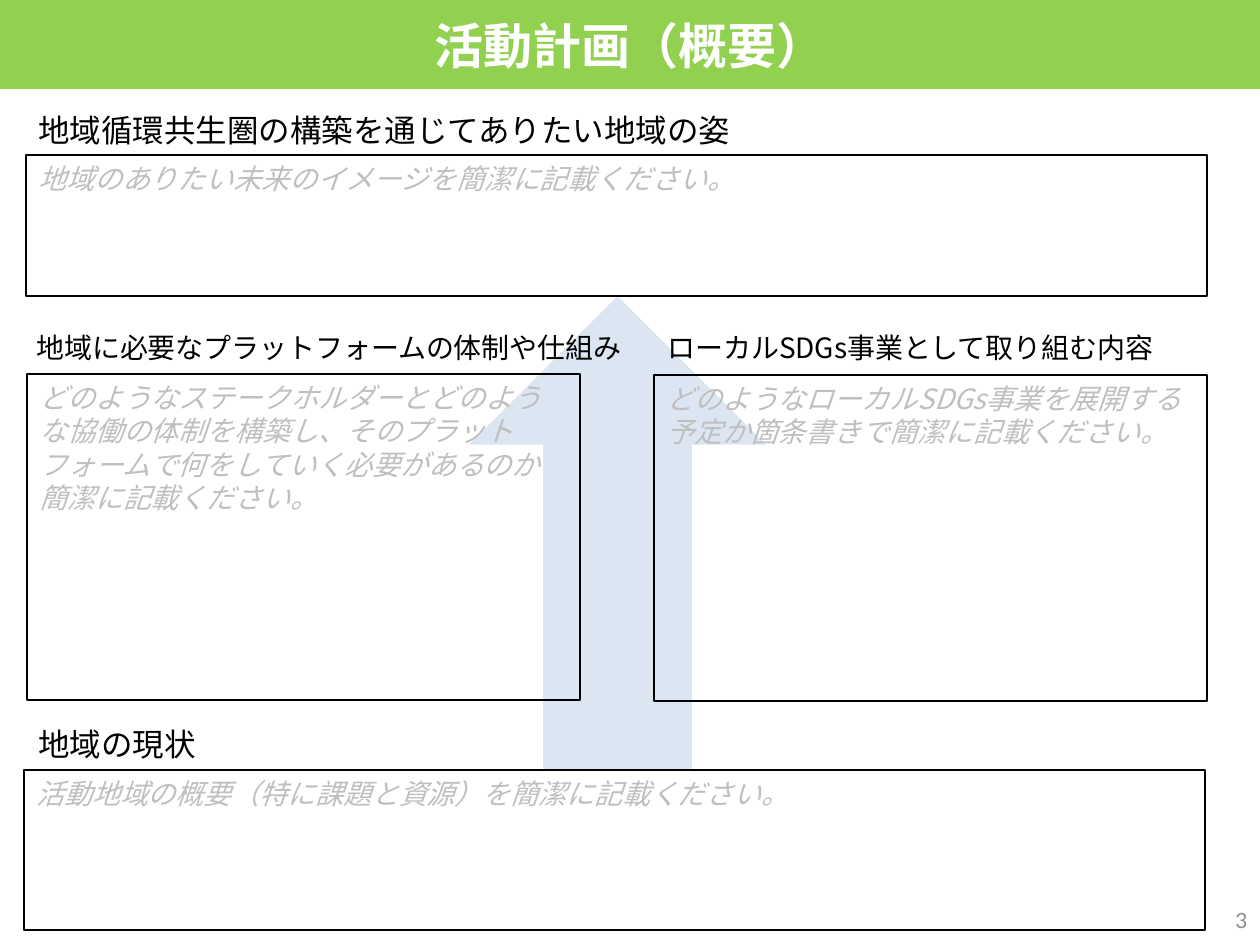
from lxml.etree import SubElement
from pptx import Presentation
from pptx.dml.color import RGBColor
from pptx.enum.shapes import MSO_SHAPE as SHAPE
from pptx.enum.text import MSO_ANCHOR as ANCHOR, PP_ALIGN as ALIGN
from pptx.oxml.ns import qn
from pptx.util import Emu, Pt

PX = 914400 // 126
JAPANESE = "Noto Sans CJK JP"
BLACK, HINT_GREY = "000000", "BFBFBF"


def px(*lengths):
    return [Emu(length * PX) for length in lengths]


def color(hex_string):
    return RGBColor.from_string(hex_string)


def write(frame, text, size=16, font=JAPANESE, ink=BLACK, bold=False,
          italic=False, align=ALIGN.LEFT, anchor=ANCHOR.TOP, inset=None):
    frame.word_wrap = True
    frame.vertical_anchor = anchor
    if inset is not None:
        frame.margin_left = frame.margin_right = inset
        frame.margin_top = frame.margin_bottom = inset
    paragraph = frame.paragraphs[0]
    paragraph.alignment = align
    run = paragraph.add_run()
    run.text = text
    run.font.size = Pt(size)
    run.font.name = font
    run.font.bold = bold
    run.font.italic = italic
    run.font.color.rgb = color(ink)
    # East Asian characters take their typeface from a separate element.
    SubElement(run.font._element, qn("a:ea"), typeface=font)


def add_block(slide, box, kind=SHAPE.RECTANGLE, fill=None, outline=None):
    block = slide.shapes.add_shape(kind, *px(*box))
    block.shadow.inherit = False
    if fill:
        block.fill.solid()
        block.fill.fore_color.rgb = color(fill)
    else:
        block.fill.background()
    if outline:
        block.line.color.rgb = color(outline)
        block.line.width = Pt(0.75)
    else:
        block.line.fill.background()
    return block


def add_label(slide, box, text, **style):
    label = slide.shapes.add_textbox(*px(*box))
    write(label.text_frame, text, **style)


def add_entry_box(slide, box, hint):
    """Outlined box to fill in, with a grey hint on what to write."""
    entry = add_block(slide, box, outline=BLACK)
    write(entry.text_frame, hint, ink=HINT_GREY, italic=True)


def main():
    prs = Presentation()
    prs.slide_width, prs.slide_height = px(1260, 945)
    slide = prs.slides.add_slide(prs.slide_layouts[6])

    arrow = add_block(slide, (469, 296, 297, 474), SHAPE.DOWN_ARROW, fill="DCE6F2")
    arrow.rotation = 180
    add_label(slide, (966, 895, 294, 50), "3", size=12, font="Lato",
              ink="8C8C8C", align=ALIGN.RIGHT, anchor=ANCHOR.MIDDLE)

    sections = [
        ("地域の現状", 18, (26, 719, 318, 50),
         "活動地域の概要（特に課題と資源）を簡潔に記載ください。",
         (24, 770, 1181, 160)),
        ("地域循環共生圏の構築を通じてありたい地域の姿", 18, (26, 105, 822, 50),
         "地域のありたい未来のイメージを簡潔に記載ください。",
         (26, 155, 1181, 141)),
        ("ローカルSDGs事業として取り組む内容", 16, (655, 324, 528, 47),
         "どのようなローカルSDGs事業を展開する予定か箇条書きで簡潔に記載ください。",
         (654, 375, 553, 326)),
        ("地域に必要なプラットフォームの体制や仕組み", 16, (24, 324, 630, 47),
         "どのようなステークホルダーとどのような協働の体制を構築し、"
         "そのプラットフォームで何をしていく必要があるのか簡潔に記載ください。",
         (27, 374, 553, 326)),
    ]
    for heading, size, heading_box, hint, entry_box in sections:
        add_label(slide, heading_box, heading, size=size)
        add_entry_box(slide, entry_box, hint)

    banner = add_block(slide, (0, 0, 1260, 89), fill="92D050")
    write(banner.text_frame, "活動計画（概要）", size=28, ink="FFFFFF", bold=True,
          align=ALIGN.CENTER, anchor=ANCHOR.MIDDLE, inset=0)

    prs.save("out.pptx")


if __name__ == "__main__":
    main()
